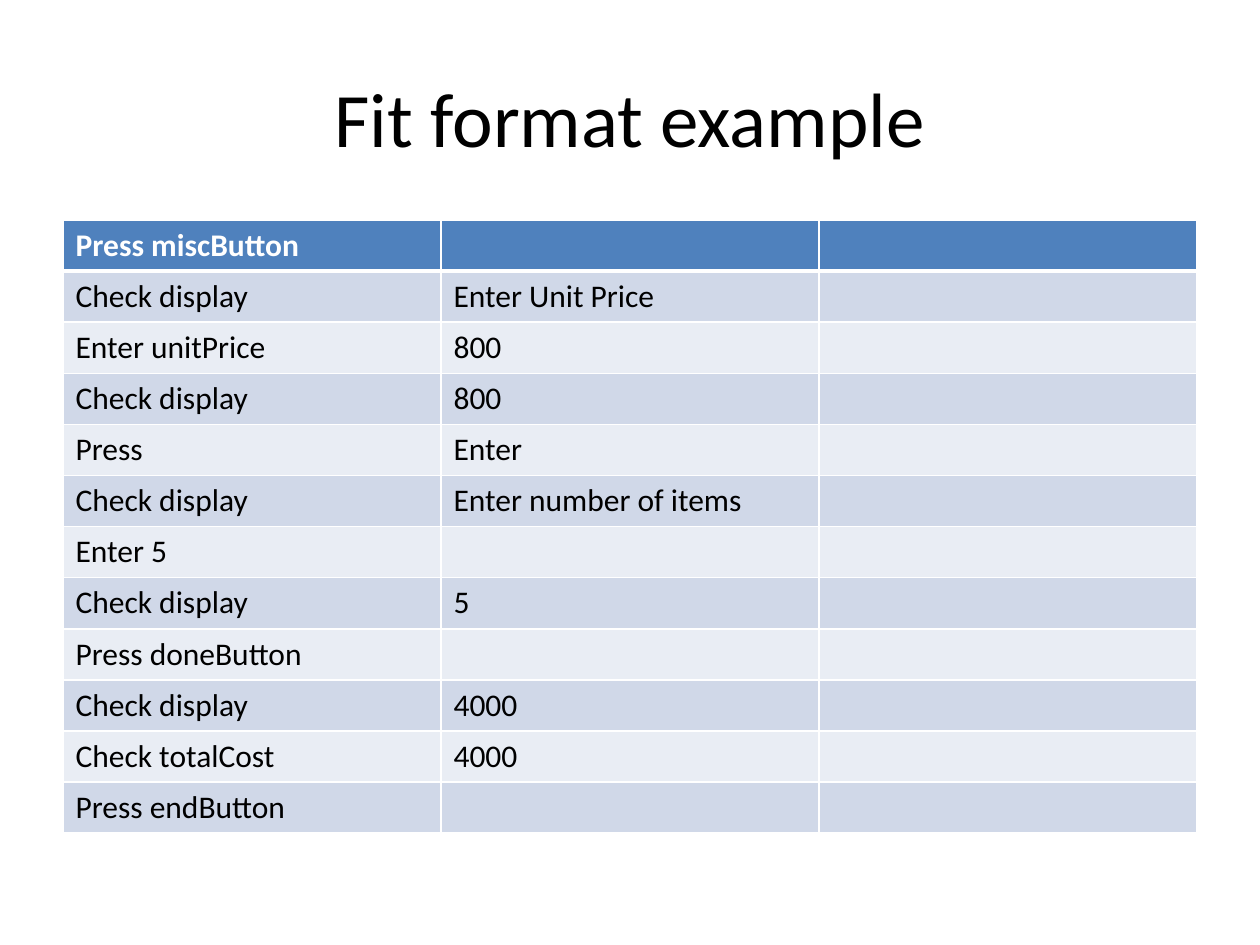
"""Build the slide that shows a test table in Fit format."""
from dataclasses import dataclass

from lxml.etree import SubElement
from pptx import Presentation
from pptx.dml.color import RGBColor
from pptx.enum.text import MSO_ANCHOR, PP_ALIGN
from pptx.oxml.ns import qn
from pptx.util import Pt

SCALE = 914400 / 126
ROWS = [
    ("Press miscButton", ""),
    ("Check display", "Enter Unit Price"),
    ("Enter unitPrice", "800"),
    ("Check display", "800"),
    ("Press", "Enter"),
    ("Check display", "Enter number of items"),
    ("Enter 5", ""),
    ("Check display", "5"),
    ("Press doneButton", ""),
    ("Check display", "4000"),
    ("Check totalCost", "4000"),
    ("Press endButton", ""),
]


@dataclass(frozen=True)
class Theme:
    """Colours, font and sizes of the slide."""
    font: str = "Calibri"
    ink: str = "000000"
    paper: str = "FFFFFF"
    head: str = "4F81BD"
    bands: tuple = ("E9EDF4", "D0D8E8")
    title: int = 44
    body: int = 18
    thin: int = 1
    thick: int = 3


def emu(px):
    """Turn pixels into EMU."""
    return round(px * SCALE)


class Board:
    """Hold the theme and the current slide."""

    def __init__(self, slide, theme):
        self.slide = slide
        self.theme = theme

    def style(self, frame, size, color, bold=False):
        """Format every run of a text frame."""
        for para in frame.paragraphs:
            for run in para.runs:
                run.font.name = self.theme.font
                run.font.size = Pt(size)
                run.font.bold = bold
                run.font.color.rgb = RGBColor.from_string(color)

    def title(self, text, left, top, width, height):
        """Place and fill the title."""
        shape = self.slide.shapes.title
        shape.left, shape.top = emu(left), emu(top)
        shape.width, shape.height = emu(width), emu(height)
        frame = shape.text_frame
        frame.text = text
        frame.vertical_anchor = MSO_ANCHOR.MIDDLE
        frame.paragraphs[0].alignment = PP_ALIGN.CENTER
        self.style(frame, self.theme.title, self.theme.ink)

    def edge(self, cell, side, width):
        """Draw one border of a cell."""
        props = cell._tc.get_or_add_tcPr()
        line = SubElement(props, qn(f"a:ln{side}"), w=str(Pt(width)))
        fill = SubElement(line, qn("a:solidFill"))
        SubElement(fill, qn("a:srgbClr"), val=self.theme.paper)

    def cell(self, cell, text, row):
        """Fill and format one cell by its row."""
        look = self.theme
        head = row == 0
        widths = {
            "L": look.thin,
            "R": look.thin,
            "T": look.thick if row == 1 else look.thin,
            "B": look.thick if head else look.thin,
        }
        for side, width in widths.items():
            self.edge(cell, side, width)
        cell.fill.solid()
        color = look.head if head else look.bands[row % 2]
        cell.fill.fore_color.rgb = RGBColor.from_string(color)
        if text:
            cell.text_frame.text = text
            ink = look.paper if head else look.ink
            self.style(cell.text_frame, look.body, ink, head)

    def table(self, rows, cols, left, top, width, height):
        """Add a table with equal rows and columns."""
        box = map(emu, (left, top, width, height))
        grid = self.slide.shapes.add_table(len(rows), cols, *box).table
        for i, texts in enumerate(rows):
            for j in range(cols):
                text = texts[j] if j < len(texts) else ""
                self.cell(grid.cell(i, j), text, i)


def main():
    """Build and save the deck."""
    deck = Presentation()
    deck.slide_width, deck.slide_height = emu(1260), emu(945)
    board = Board(deck.slides.add_slide(deck.slide_layouts[5]), Theme())
    board.title("Fit format example", 63, 38, 1134, 158)
    board.table(ROWS, 3, 63, 220, 1134, 613)
    deck.save("out.pptx")


if __name__ == "__main__":
    main()
